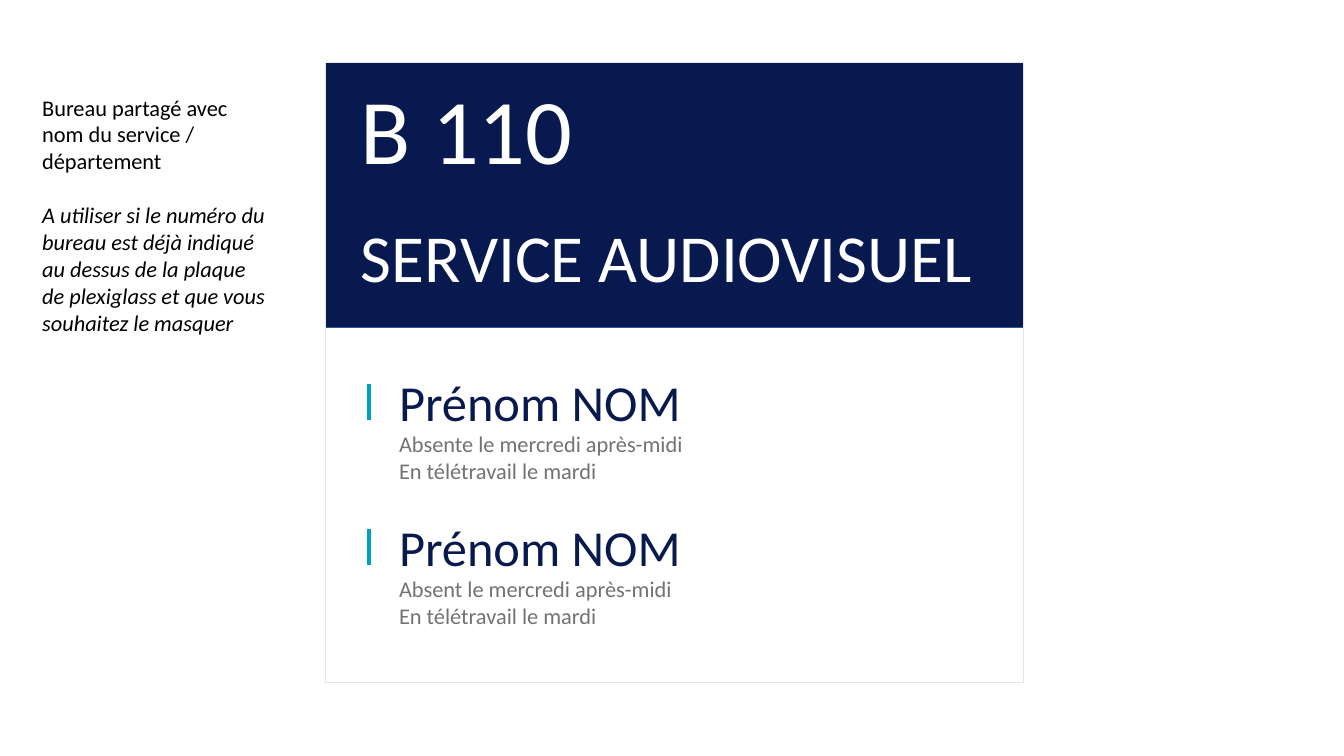
from pptx import Presentation
from pptx.dml.color import RGBColor
from pptx.enum.shapes import MSO_CONNECTOR, MSO_SHAPE
from pptx.enum.text import MSO_ANCHOR, MSO_AUTO_SIZE, PP_ALIGN
from pptx.oxml.ns import qn
from pptx.util import Inches, Pt
from lxml import etree

RECTANGLE = MSO_SHAPE.RECTANGLE
STRAIGHT = MSO_CONNECTOR.STRAIGHT
LEFT = PP_ALIGN.LEFT
TOP = MSO_ANCHOR.TOP
FIT_SHAPE = MSO_AUTO_SIZE.SHAPE_TO_FIT_TEXT
TITLE_ONLY_LAYOUT = 5

COLORS = {
    "banner": "08194F",
    "banner_edge": "325491",
    "frame": "E7E6E6",
    "name": "08194E",
    "schedule": "767171",
    "accent": "00A0C6",
    "white": "FFFFFF",
    "black": "000000",
}


class DoorSign:
    font = "Calibri"

    def __init__(self, slide):
        self.slide = slide

    def color(self, name):
        return RGBColor.from_string(COLORS[name])

    def rectangle(self, left, top, width, height, line, fill=None):
        shape = self.slide.shapes.add_shape(
            RECTANGLE, Inches(left), Inches(top), Inches(width), Inches(height))
        shape.shadow.inherit = False
        if fill:
            shape.fill.solid()
            shape.fill.fore_color.rgb = self.color(fill)
        else:
            shape.fill.background()
        shape.line.color.rgb = self.color(line)
        shape.line.width = Pt(1)

    def set_text(self, shape, text, size, color):
        """Fill a text shape, one paragraph per line of text."""
        text_frame = shape.text_frame
        text_frame.text = text
        text_frame.word_wrap = True
        text_frame.auto_size = FIT_SHAPE
        text_frame.vertical_anchor = TOP
        for paragraph in text_frame.paragraphs:
            paragraph.alignment = LEFT
            for run in paragraph.runs:
                run.font.name = self.font
                run.font.size = Pt(size)
                run.font.color.rgb = self.color(color)

    def text(self, left, top, width, height, text, size, color):
        shape = self.slide.shapes.add_textbox(
            Inches(left), Inches(top), Inches(width), Inches(height))
        self.set_text(shape, text, size, color)
        return shape

    def title(self, left, top, width, height, text, size, color):
        """Place the title placeholder in front of the shapes drawn so far."""
        shape = self.slide.shapes.title
        shape.left, shape.top = Inches(left), Inches(top)
        shape.width, shape.height = Inches(width), Inches(height)
        self.set_text(shape, text, size, color)
        shape.element.getparent().append(shape.element)

    def accent_bar(self, left, top, height):
        connector = self.slide.shapes.add_connector(
            STRAIGHT, Inches(left), Inches(top), Inches(left), Inches(top + height))
        connector.line.color.rgb = self.color("accent")
        connector.line.width = Pt(2.75)
        etree.SubElement(connector.element.spPr, qn("a:effectLst"))

    def person(self, top, name, schedule):
        self.text(3.86, top, 5.7, 0.71, name, 36, "name")
        self.text(3.86, top + 0.59, 5.7, 0.64, schedule, 16, "schedule")
        self.accent_bar(3.66, top + 0.18, 0.36)


def main():
    presentation = Presentation()
    presentation.slide_width = Inches(13.33)
    presentation.slide_height = Inches(7.5)
    layout = presentation.slide_layouts[TITLE_ONLY_LAYOUT]
    sign = DoorSign(presentation.slides.add_slide(layout))

    sign.rectangle(3.23, 0.62, 6.92, 2.63, "banner_edge", "banner")
    sign.rectangle(3.23, 0.62, 6.92, 6.15, "frame")
    sign.title(3.48, 0.67, 3.57, 1.21, "B 110", 66, "white")
    sign.text(3.48, 2.09, 6.35, 0.91, "SERVICE AUDIOVISUEL", 48, "white")

    absences = ["Absente le mercredi après-midi", "Absent le mercredi après-midi"]
    for index, absence in enumerate(absences):
        sign.person(3.63 + 1.44 * index, "Prénom NOM",
                    absence + "\nEn télétravail le mardi")

    guidance = sign.text(
        0.32, 0.88, 2.43, 2.52,
        "Bureau partagé avec nom du service / département\n"
        "A utiliser si le numéro du bureau est déjà indiqué au dessus "
        "de la plaque de plexiglass et que vous souhaitez le masquer",
        16, "black")
    usage = guidance.text_frame.paragraphs[1]
    usage.space_before = Pt(19.5)
    usage.runs[0].font.italic = True

    presentation.save("out.pptx")


if __name__ == "__main__":
    main()
